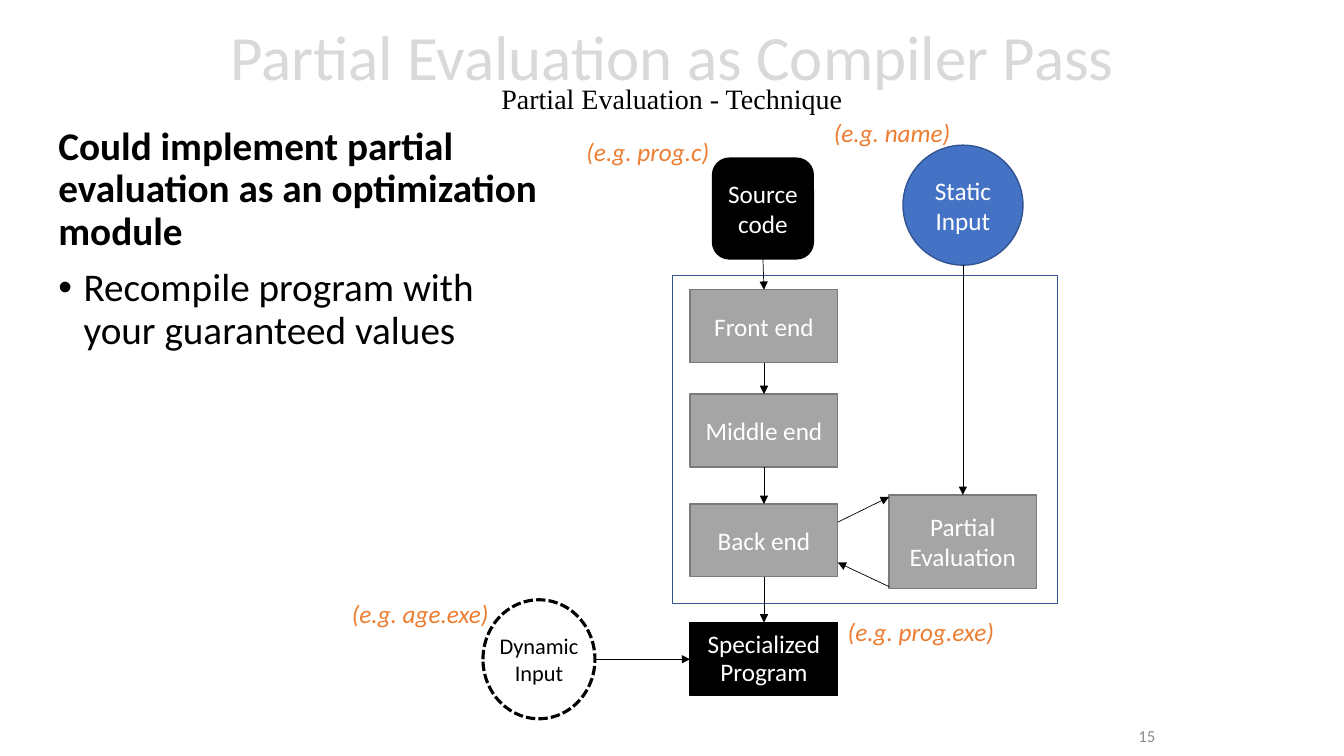
from lxml import etree
from pptx import Presentation
from pptx.dml.color import RGBColor
from pptx.enum import dml, shapes, text
from pptx.oxml import ns
from pptx.util import Pt

BLACK, WHITE, GREY, NAVY, ORANGE = "000000", "FFFFFF", "A5A5A5", "325491", "ED7D31"
KIND = shapes.MSO_SHAPE
ALIGN = text.PP_ALIGN
MID = text.MSO_ANCHOR.MIDDLE


def hue(code):
    return RGBColor.from_string(code)


def sub(node, tag, **attrs):
    return etree.SubElement(node, ns.qn(tag), attrs)


def add_run(para, words, size, color, face="Calibri", bold=False, italic=False):
    run = para.add_run()
    run.text = words
    font = run.font
    font.size, font.name = Pt(size), face
    font.bold, font.italic = bold, italic
    font.color.rgb = hue(color)


def place(shape, left, top, width, height):
    shape.left, shape.top = Pt(left), Pt(top)
    shape.width, shape.height = Pt(width), Pt(height)


def add_node(slide, kind, box, lines, fill, edge, color=WHITE, size=18):
    node = slide.shapes.add_shape(kind, *map(Pt, box))
    node.shadow.inherit = False
    if fill:
        node.fill.solid()
        node.fill.fore_color.rgb = hue(fill)
    else:
        node.fill.background()
    node.line.color.rgb = hue(edge)
    node.line.width = Pt(1)
    frame = node.text_frame
    frame.word_wrap = True
    frame.vertical_anchor = MID
    for i, line in enumerate(lines):
        para = frame.add_paragraph() if i else frame.paragraphs[0]
        para.alignment = ALIGN.CENTER
        add_run(para, line, size, color)
    return node


def add_label(slide, words, left, top, width, size=18, color=ORANGE, italic=True):
    label = slide.shapes.add_textbox(Pt(left), Pt(top), Pt(width), Pt(29))
    label.text_frame.word_wrap = False
    add_run(label.text_frame.paragraphs[0], words, size, color, italic=italic)
    return label


def add_arrow(slide, start, end):
    ends = [Pt(v) for v in (*start, *end)]
    arrow = slide.shapes.add_connector(shapes.MSO_CONNECTOR.STRAIGHT, *ends)
    arrow.line.color.rgb = hue(BLACK)
    arrow.line.width = Pt(0.5)
    sub(arrow.line._get_or_add_ln(), "a:tailEnd", type="triangle")
    sub(arrow._element.spPr, "a:effectLst")
    return arrow


def link(slide, first, last):
    """Arrow from the bottom of one box to the top of the next."""
    arrow = add_arrow(slide, (0, 0), (0, 0))
    arrow.begin_connect(first, 2)
    arrow.end_connect(last, 0)


def add_title(slide):
    title = slide.shapes.title
    place(title, 120, 2, 720, 104.4)
    frame = title.text_frame
    frame.auto_size = text.MSO_AUTO_SIZE.NONE
    frame.word_wrap = True
    frame.vertical_anchor = MID
    para = frame.paragraphs[0]
    para.alignment = ALIGN.CENTER
    para.line_spacing = 0.7
    add_run(para, "Partial Evaluation as Compiler Pass", 45, "D9D9D9")
    para.add_line_break()
    add_run(para, "Partial Evaluation - Technique", 20, BLACK, "Times New Roman")


def add_body(slide):
    body = slide.shapes.add_textbox(Pt(34.6), Pt(87), Pt(361.4), Pt(356.4))
    frame = body.text_frame
    frame.word_wrap = True
    head, point = frame.paragraphs[0], frame.add_paragraph()
    for para in (head, point):
        para.line_spacing = 0.9
        para.space_before = Pt(10)
    add_run(head, "Could implement partial evaluation as an optimization module",
            28, BLACK, bold=True)
    add_run(point, "Recompile program with your guaranteed values", 28, BLACK)
    props = point._p.get_or_add_pPr()
    props.set("marL", str(Pt(18)))
    props.set("indent", str(Pt(-18)))
    sub(props, "a:buFont", typeface="Arial")
    sub(props, "a:buChar", char="•")


def add_flow(slide):
    # Compiler frame
    add_node(slide, KIND.RECTANGLE, (480.2, 196.6, 275, 234.7), [], None, NAVY)

    # Inputs
    source = add_node(slide, KIND.ROUNDED_RECTANGLE, (509, 113, 72, 72),
                      ["Source code"], BLACK, BLACK)
    add_node(slide, KIND.OVAL, (645, 103.7, 85.7, 85.7),
             ["Static Input"], "4472C4", NAVY)
    dynamic = add_node(slide, KIND.OVAL, (345, 428.4, 80, 85),
                       ["Dynamic Input"], WHITE, BLACK, BLACK, 16)
    dynamic.line.width = Pt(2.25)
    dynamic.line.dash_style = dml.MSO_LINE.SQUARE_DOT
    dynamic.text_frame.margin_left = dynamic.text_frame.margin_right = 0

    # Compiler column, ending in the program
    chain = [source]
    for name, top in (("Front end", 207), ("Middle end", 281.5), ("Back end", 360)):
        chain.append(add_node(slide, KIND.RECTANGLE, (493, top, 105.4, 52),
                              [name], GREY, "7A7A7A"))
    program = add_node(slide, KIND.RECTANGLE, (493, 444.7, 105.4, 52),
                       ["Specialized", "Program"], BLACK, BLACK)
    for para in program.text_frame.paragraphs:
        para.line_spacing = 0.93
    chain.append(program)
    for first, last in zip(chain, chain[1:]):
        link(slide, first, last)

    # Partial evaluation and the side arrows
    add_node(slide, KIND.RECTANGLE, (635, 353.5, 105.4, 67),
             ["Partial Evaluation"], GREY, "7A7A7A")
    for start, end in (((598.4, 373), (635, 355)),
                       ((635, 419), (598.4, 401.8)),
                       ((687.8, 189.4), (687.8, 353.5)),
                       ((425, 470.9), (493, 470.9))):
        add_arrow(slide, start, end)

    # Examples
    for words, left, top, width in (("(e.g. prog.exe)", 598.4, 437, 120),
                                    ("(e.g. age.exe)", 244.2, 424, 113),
                                    ("(e.g. prog.c)", 411.8, 93.6, 103),
                                    ("(e.g. name)", 588.5, 80, 98.6)):
        add_label(slide, words, left, top, width)


def main():
    deck = Presentation()
    deck.slide_width, deck.slide_height = Pt(960), Pt(540)
    slide = deck.slides.add_slide(deck.slide_layouts[5])
    add_title(slide)
    add_body(slide)
    add_flow(slide)

    # Page number
    page = add_label(slide, "15", 670.3, 511.2, 162, 12, "8C8C8C", False)
    page.text_frame.word_wrap = True
    page.text_frame.vertical_anchor = MID
    page.text_frame.paragraphs[0].alignment = ALIGN.RIGHT
    deck.save("out.pptx")


if __name__ == "__main__":
    main()
